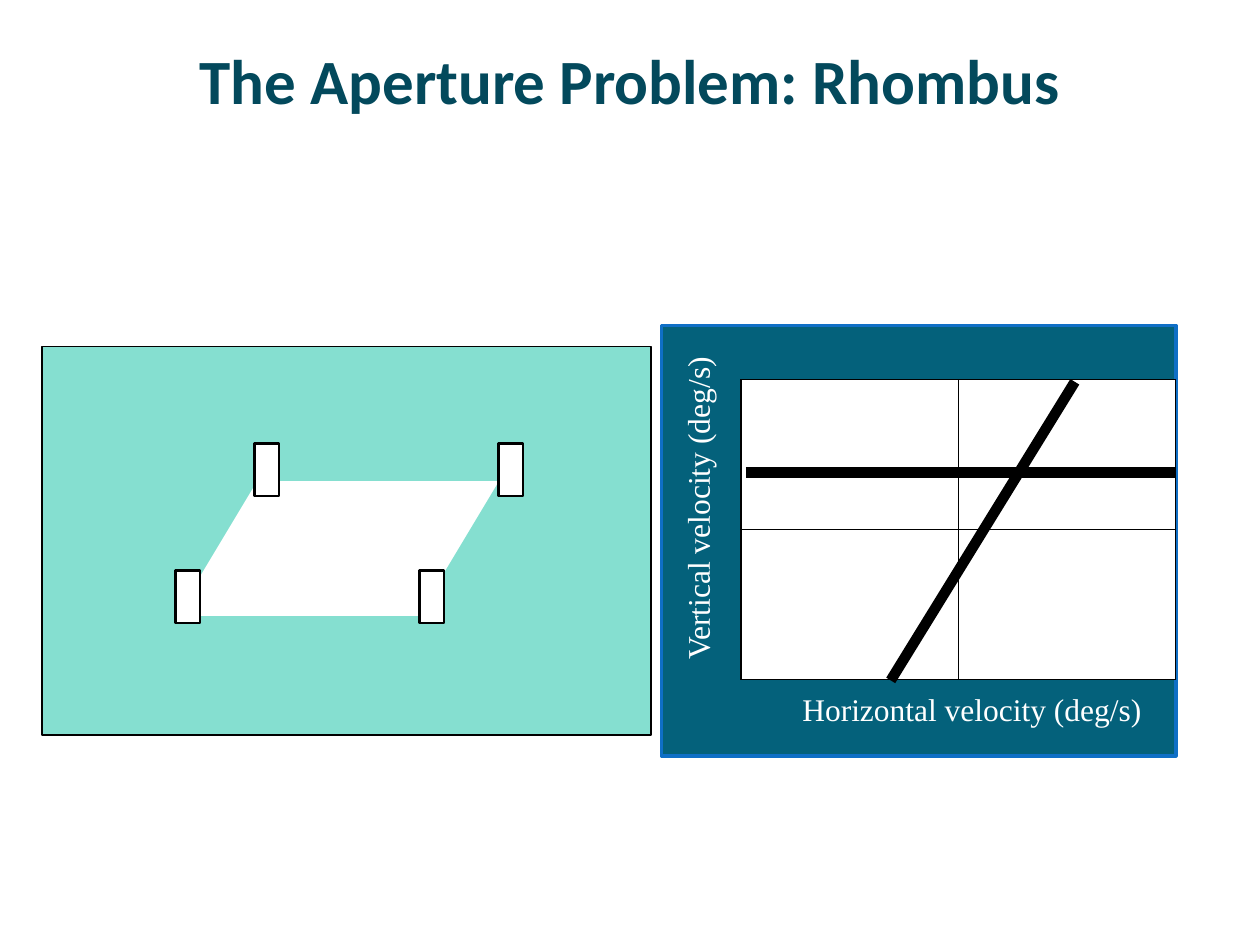
from lxml.etree import SubElement
from pptx import Presentation
from pptx.dml.color import RGBColor
from pptx.enum.shapes import MSO_CONNECTOR as Connector, MSO_SHAPE as Shape
from pptx.enum.text import MSO_ANCHOR as Anchor, MSO_AUTO_SIZE as AutoSize, PP_ALIGN as Align
from pptx.oxml.ns import qn
from pptx.util import Pt

COLORS = {"title": "03495C", "panel": "04617B", "panel_edge": "0F6FC6",
          "scene": "85DFD0", "white": "FFFFFF", "black": "000000"}

TITLE = "The Aperture Problem: Rhombus"
TITLE_BOX = (36, 12.25, 648, 66)

# Boxes are left, top, width, height in points.
PANEL = (378, 186, 294, 246)
PLOT = (423.4, 216.7, 248.4, 171.4)
AXIS_LABELS = [
    ("Horizontal velocity (deg/s)", (451.4, 391, 210.2, 28.8), 0),
    ("Vertical velocity (deg/s)", (303.8, 275, 189.4, 28.8), 270),
]
CONSTRAINT_LINES = [((614.2, 218.2), (509, 388.8)), ((426.2, 270), (672, 270))]

SCENE = (24, 198, 348, 222)
RHOMBUS = (100.8, 275, 184.3, 77)
RHOMBUS_SLANT = 0.6
APERTURE_SIZE = (14, 30)
APERTURE_ROWS = [(253.4, 145.6), (326, 100.3)]  # top, left of the first aperture
APERTURE_STEP = 139.4


def color(name):
    return RGBColor.from_string(COLORS[name])


def points(values):
    return [Pt(value) for value in values]


def add_box(shapes, box, fill=None, line=None, width=0.75, kind=Shape.RECTANGLE):
    shape = shapes.add_shape(kind, *points(box))
    shape.shadow.inherit = False
    if fill:
        shape.fill.solid()
        shape.fill.fore_color.rgb = color(fill)
    else:
        shape.fill.background()
    if line:
        shape.line.color.rgb = color(line)
        shape.line.width = Pt(width)
    else:
        shape.line.fill.background()
    return shape


def add_line(shapes, start, end, width):
    line = shapes.add_connector(Connector.STRAIGHT, *points((*start, *end)))
    line.line.color.rgb = color("black")
    line.line.width = Pt(width)
    SubElement(line._element.spPr, qn("a:effectLst"))
    return line


def write(frame, text, size, font, ink, bold=False, align=Align.LEFT):
    para = frame.paragraphs[0]
    para.alignment = align
    span = para.add_run()
    span.text = text
    span.font.size = Pt(size)
    span.font.name = font
    span.font.bold = bold
    span.font.color.rgb = color(ink)


def add_title(slide):
    title = slide.shapes.title
    title.left, title.top, title.width, title.height = points(TITLE_BOX)
    title.text_frame.vertical_anchor = Anchor.MIDDLE
    write(title.text_frame, TITLE, 36, "Calibri", "title", bold=True, align=Align.CENTER)


def add_plot(shapes):
    add_box(shapes, PLOT, "white", "black")
    left, top, width, height = PLOT
    middle_x, middle_y = left + width / 2, top + height / 2
    axes = shapes.add_group_shape().shapes
    frame = add_box(axes, PLOT, line="black")
    for start, end, first_side, last_side in [
        ((middle_x, top), (middle_x, top + height), 0, 2),
        ((left, middle_y), (left + width, middle_y), 1, 3),
    ]:
        axis = add_line(axes, start, end, 0.75)
        axis.begin_connect(frame, first_side)
        axis.end_connect(frame, last_side)


def add_axis_labels(shapes):
    for text, place, rotation in AXIS_LABELS:
        box = shapes.add_textbox(*points(place))
        box.rotation = rotation
        box.text_frame.word_wrap = False
        box.text_frame.auto_size = AutoSize.SHAPE_TO_FIT_TEXT
        write(box.text_frame, text, 18, "Times New Roman", "white")


def add_scene(shapes):
    add_box(shapes, SCENE, "scene", "black")
    rhombus = add_box(shapes, RHOMBUS, "white", kind=Shape.PARALLELOGRAM)
    rhombus.adjustments[0] = RHOMBUS_SLANT
    for top, first_left in APERTURE_ROWS:
        for left in (first_left, first_left + APERTURE_STEP):
            add_box(shapes, (left, top, *APERTURE_SIZE), "white", "black", width=1.5)


def main():
    deck = Presentation()
    deck.slide_width, deck.slide_height = Pt(720), Pt(540)
    slide = deck.slides.add_slide(deck.slide_layouts[5])
    shapes = slide.shapes
    add_box(shapes, PANEL, "panel", "panel_edge", width=2)
    add_title(slide)
    add_plot(shapes)
    add_axis_labels(shapes)
    add_scene(shapes)
    for start, end in CONSTRAINT_LINES:
        add_line(shapes, start, end, 6)
    deck.save("out.pptx")


if __name__ == "__main__":
    main()
